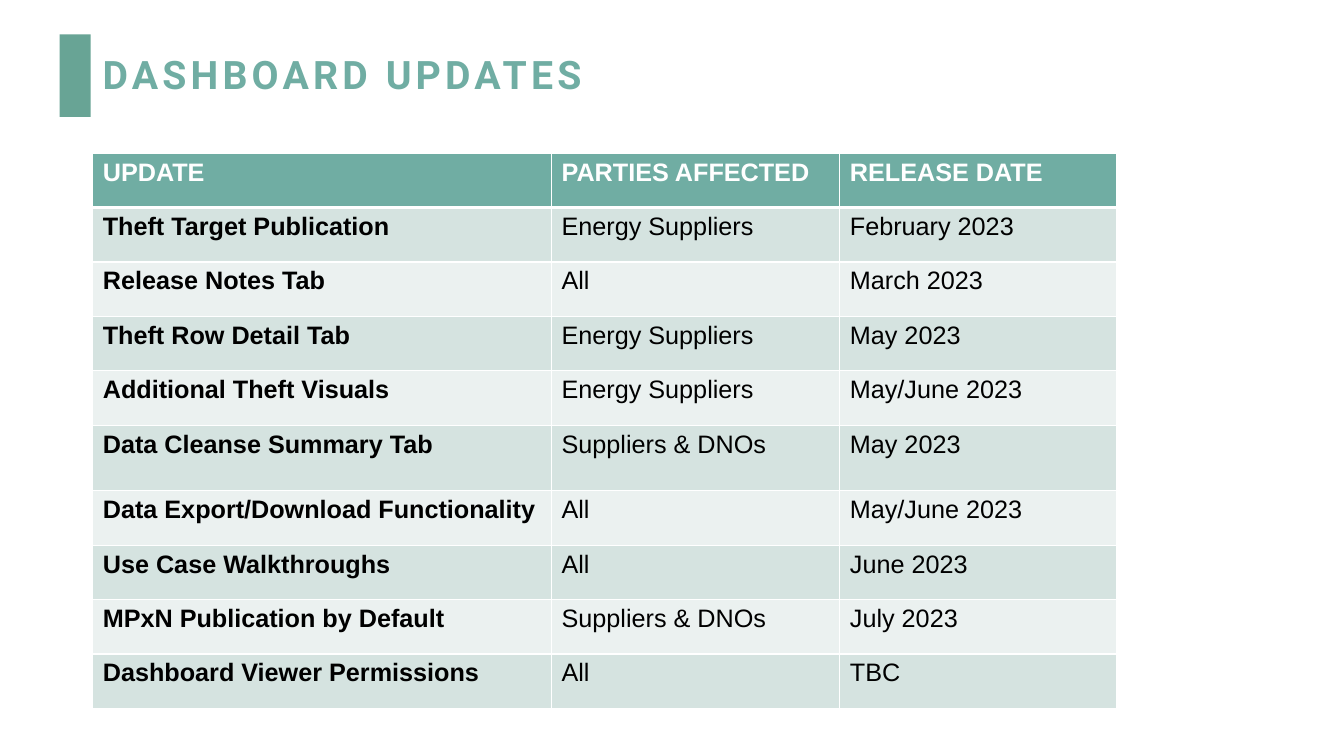
import pptx
import pptx.dml.color
import pptx.enum.shapes
import pptx.enum.text
import pptx.util
import lxml.etree
import pptx.oxml.ns

COLORS = {
    "bar": "68A495",
    "accent": "70ADA3",
    "band_dark": "D5E3E0",
    "band_light": "EBF1F0",
    "white": "FFFFFF",
    "black": "000000",
}
LEFT, WIDTH = 0.92, 10.15
COLUMN_WIDTHS = [4.55, 2.86, 2.74]
ROW_HEIGHT, TALL_ROW_HEIGHT, TALL_ROW = 0.54, 0.65, 5
ROWS = [
    ("UPDATE", "PARTIES AFFECTED", "RELEASE DATE"),
    ("Theft Target Publication", "Energy Suppliers", "February 2023"),
    ("Release Notes Tab", "All", "March 2023"),
    ("Theft Row Detail Tab", "Energy Suppliers", "May 2023"),
    ("Additional Theft Visuals", "Energy Suppliers", "May/June 2023"),
    ("Data Cleanse Summary Tab", "Suppliers & DNOs", "May 2023"),
    ("Data Export/Download Functionality", "All", "May/June 2023"),
    ("Use Case Walkthroughs", "All", "June 2023"),
    ("MPxN Publication by Default", "Suppliers & DNOs", "July 2023"),
    ("Dashboard Viewer Permissions", "All", "TBC"),
]
inches = pptx.util.Inches


def style_font(font, name, size, color, bold):
    font.name = name
    font.size = pptx.util.Pt(size)
    font.bold = bold
    font.color.rgb = pptx.dml.color.RGBColor.from_string(COLORS[color])


def add_border(cell, side, points):
    line = lxml.etree.SubElement(
        cell._tc.get_or_add_tcPr(), pptx.oxml.ns.qn("a:" + side), w=str(pptx.util.Pt(points)))
    fill = lxml.etree.SubElement(line, pptx.oxml.ns.qn("a:solidFill"))
    lxml.etree.SubElement(fill, pptx.oxml.ns.qn("a:srgbClr"), val=COLORS["white"])


presentation = pptx.Presentation()
presentation.slide_width = inches(13.33)
presentation.slide_height = inches(7.5)
slide = presentation.slides.add_slide(presentation.slide_layouts[6])

# Accent bar
bar = slide.shapes.add_shape(
    pptx.enum.shapes.MSO_SHAPE.RECTANGLE, inches(0.59), inches(0.34), inches(0.31), inches(0.82))
bar.shadow.inherit = False
bar.fill.solid()
bar.fill.fore_color.rgb = pptx.dml.color.RGBColor.from_string(COLORS["bar"])
bar.line.fill.background()

# Title
title = slide.shapes.add_textbox(inches(LEFT), inches(0.4), inches(WIDTH), inches(0.72))
title.text_frame.word_wrap = True
title.text_frame.vertical_anchor = pptx.enum.text.MSO_ANCHOR.MIDDLE
paragraph = title.text_frame.paragraphs[0]
paragraph.line_spacing = 0.9
run = paragraph.add_run()
run.text = "DASHBOARD UPDATES"
style_font(run.font, "Roboto", 28, "accent", True)
run.font._element.set("spc", "300")

# Table of updates
table = slide.shapes.add_table(
    len(ROWS), len(COLUMN_WIDTHS), inches(LEFT), inches(1.52),
    inches(WIDTH), inches(ROW_HEIGHT * len(ROWS))).table
for column, width in zip(table.columns, COLUMN_WIDTHS):
    column.width = inches(width)

for row_index, texts in enumerate(ROWS):
    is_header = row_index == 0
    table.rows[row_index].height = inches(
        TALL_ROW_HEIGHT if row_index == TALL_ROW else ROW_HEIGHT)
    band = "accent" if is_header else ("band_light", "band_dark")[row_index % 2]
    for column_index, text in enumerate(texts):
        cell = table.cell(row_index, column_index)
        cell.text = text
        style_font(cell.text_frame.paragraphs[0].font, "Arial", 18,
                   "white" if is_header else "black", is_header or column_index == 0)
        # Thick rule between the header and the body
        add_border(cell, "lnL", 1)
        add_border(cell, "lnR", 1)
        add_border(cell, "lnT", 3 if row_index == 1 else 1)
        add_border(cell, "lnB", 3 if is_header else 1)
        cell.fill.solid()
        cell.fill.fore_color.rgb = pptx.dml.color.RGBColor.from_string(COLORS[band])

presentation.save("out.pptx")
